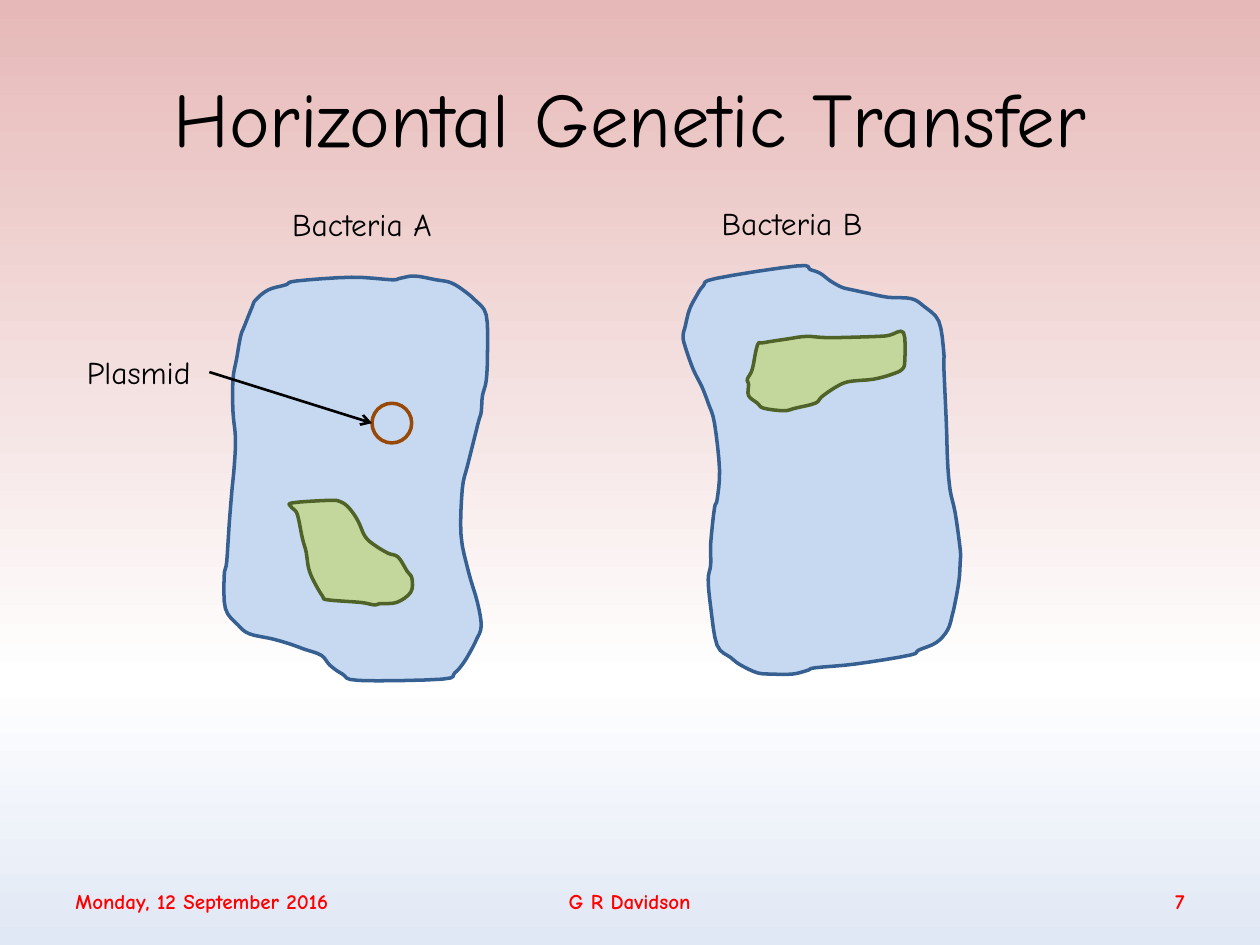
import copy

import pptx
import pptx.dml.color
import pptx.enum.shapes
import pptx.enum.text
import pptx.oxml
import pptx.oxml.ns
import pptx.util

Cm, Pt = pptx.util.Cm, pptx.util.Pt
ALIGN = pptx.enum.text.PP_ALIGN
ANCHOR = pptx.enum.text.MSO_ANCHOR

FONT = "Comic Neue"
UNIT = 0.0254  # cm per unit of the cell outlines
STEPS = 4  # segments drawn between two outline points
COLORS = {
    "text": "000000", "footer": "FF0000",
    "cell": "C6D9F1", "cell_line": "376092",
    "dna": "C3D69B", "dna_line": "4F6228", "plasmid": "984807",
}
BACKGROUND = [(0, "E6B9B8"), (0.72, "FFFFFF"), (1, "E1E8F5")]

# Outlines are relative to the top left corner of their cell.
CELL_A = [
    (133, 4), (101, 2), (57, 5), (49, 8), (35, 12), (25, 20), (22, 26), (16, 41),
    (13, 49), (10, 66), (7, 83), (7, 109), (9, 130), (8, 152), (6, 173), (4, 198),
    (2, 228), (0, 239), (1, 265), (11, 278), (20, 285), (38, 289), (52, 293),
    (63, 297), (77, 302), (84, 310), (94, 317), (107, 322), (173, 321), (183, 316),
    (190, 308), (196, 298), (200, 290), (204, 279), (201, 260), (194, 236),
    (188, 207), (189, 170), (193, 152), (198, 132), (202, 116), (204, 109),
    (205, 96), (208, 84), (209, 62), (208, 32), (199, 20), (188, 11), (179, 6),
    (168, 4), (151, 1), (139, 3),
]
DNA_A = [
    (54, 181), (83, 179), (92, 180), (99, 185), (106, 195), (112, 208), (120, 215),
    (130, 221), (138, 224), (145, 235), (149, 241), (148, 252), (137, 260),
    (124, 261), (119, 262), (108, 260), (82, 258), (78, 255), (71, 243), (67, 233),
    (65, 220), (62, 209), (59, 194), (57, 188), (53, 184),
]
CELL_B = [
    (105, 319), (137, 316), (180, 309), (187, 305), (201, 299), (210, 289),
    (214, 276), (216, 267), (219, 250), (220, 235), (220, 225), (216, 196),
    (212, 178), (210, 156), (209, 125), (207, 80), (207, 69), (203, 44), (191, 32),
    (181, 26), (163, 25), (148, 22), (134, 19), (126, 17), (117, 12), (109, 6),
    (101, 3), (91, 0), (26, 10), (16, 16), (10, 25), (5, 35), (2, 47), (0, 56),
    (2, 65), (8, 82), (15, 96), (20, 109), (25, 125), (29, 162), (27, 186),
    (25, 192), (22, 220), (22, 237), (20, 249), (22, 271), (27, 301), (38, 311),
    (46, 317), (59, 323), (70, 324), (87, 324), (99, 321),
]
DNA_B = [
    (175, 53), (176, 75), (174, 82), (166, 86), (151, 90), (131, 92), (120, 97),
    (110, 104), (105, 109), (89, 113), (80, 115), (64, 113), (59, 109), (52, 103),
    (52, 94), (51, 90), (55, 82), (59, 63), (64, 61), (83, 58), (98, 56),
    (116, 57), (155, 56), (164, 55),
]


def rgb(name):
    return pptx.dml.color.RGBColor.from_string(COLORS.get(name, name))


def add_text(s, text, box, size, color="text", align=ALIGN.LEFT,
             anchor=ANCHOR.TOP, bold=False, wrap=True):
    sp = s.shapes.add_textbox(*map(Cm, box))
    tf = sp.text_frame
    tf.text = text
    tf.word_wrap = wrap
    tf.vertical_anchor = anchor
    p = tf.paragraphs[0]
    p.alignment = align
    font = p.runs[0].font
    font.name, font.size, font.bold = FONT, Pt(size), bold
    font.color.rgb = rgb(color)


def set_line(sp, color, width):
    sp.line.color.rgb = rgb(color)
    sp.line.width = Pt(width)


def smooth_outline(points):
    """Return points along a closed Catmull-Rom curve through the given ones."""
    curve = []
    for i in range(len(points)):
        quad = [points[(i + k) % len(points)] for k in (-1, 0, 1, 2)]
        for step in range(STEPS):
            t = step / STEPS
            curve.append(tuple(
                0.5 * (2 * b + (c - a) * t + (2 * a - 5 * b + 4 * c - d) * t ** 2
                       + (3 * b - a - 3 * c + d) * t ** 3)
                for a, b, c, d in zip(*quad)))
    return curve


def add_blob(s, left, top, points, fill, line):
    scale = 100  # keeps fractions of a unit
    curve = [(round(x * scale), round(y * scale)) for x, y in smooth_outline(points)]
    builder = s.shapes.build_freeform(*curve[0], scale=Cm(UNIT) / scale)
    builder.add_line_segments(curve[1:], close=True)
    sp = builder.convert_to_shape(Cm(left), Cm(top))
    sp.shadow.inherit = False
    sp.fill.solid()
    sp.fill.fore_color.rgb = rgb(fill)
    set_line(sp, line, 2)


def add_bacterium(s, left, top, name, label_offset, cell, dna):
    dx, dy = label_offset
    add_blob(s, left, top, cell, "cell", "cell_line")
    add_blob(s, left, top, dna, "dna", "dna_line")
    add_text(s, name, (left + dx, top + dy, 3.7, 1.02), 18, wrap=False)


def add_plasmid(s, left, top):
    """Place the label, the arrow and the ring it points to."""
    size = 0.8
    ring_x, ring_y = left + 6, top + 1.14
    sp = s.shapes.add_shape(pptx.enum.shapes.MSO_SHAPE.OVAL,
                            Cm(ring_x), Cm(ring_y), Cm(size), Cm(size))
    sp.shadow.inherit = False
    sp.fill.background()
    set_line(sp, "plasmid", 2)

    add_text(s, "Plasmid", (left, top, 2.72, 1.02), 18, wrap=False)
    arrow = s.shapes.add_connector(
        pptx.enum.shapes.MSO_CONNECTOR.STRAIGHT, Cm(left + 2.72), Cm(top + 0.51),
        Cm(ring_x), Cm(ring_y + size / 2))
    set_line(arrow, "text", 1.5)
    qn = pptx.oxml.ns.qn
    tail = arrow.line._get_or_add_ln().makeelement(qn("a:tailEnd"), {"type": "arrow"})
    arrow.line._get_or_add_ln().append(tail)
    sp_pr = arrow._element.spPr
    sp_pr.append(sp_pr.makeelement(qn("a:effectLst"), {}))


def add_footer(s, left, top, width, height):
    parts = [
        ("Monday, 12 September 2016", 0, 8.43, ALIGN.LEFT),
        ("G R Davidson", 7.4, 8.05, ALIGN.CENTER),
        ("7", width - 5.92, 5.92, ALIGN.RIGHT),
    ]
    for text, dx, part_width, align in parts:
        add_text(s, text, (left + dx, top, part_width, height), 12, "footer",
                 align, ANCHOR.MIDDLE, bold=True)


def set_background(s):
    fill = s.background.fill
    fill.gradient()
    fill.gradient_angle = 270
    stops = s.element.find(".//" + pptx.oxml.ns.qn("a:gsLst"))
    stops.append(copy.deepcopy(stops[-1]))
    for stop, (position, color) in zip(fill.gradient_stops, BACKGROUND):
        stop.position = position
        stop.color.rgb = rgb(color)


def main():
    prs = pptx.Presentation()
    prs.slide_width, prs.slide_height = Cm(25.4), Cm(19.05)
    s = prs.slides.add_slide(prs.slide_layouts[6])
    set_background(s)
    add_footer(s, 1.27, 17.65, 22.86, 1.02)
    add_bacterium(s, 4.52, 5.54, "Bacteria A", (1.12, -1.53), CELL_A, DNA_A)
    add_bacterium(s, 13.77, 5.36, "Bacteria B", (0.53, -1.37), CELL_B, DNA_B)
    add_plasmid(s, 1.5, 6.99)
    add_text(s, "Horizontal Genetic Transfer", (1.27, 0.76, 22.86, 3.18), 44,
             align=ALIGN.CENTER, anchor=ANCHOR.MIDDLE)
    prs.save("out.pptx")


if __name__ == "__main__":
    main()
